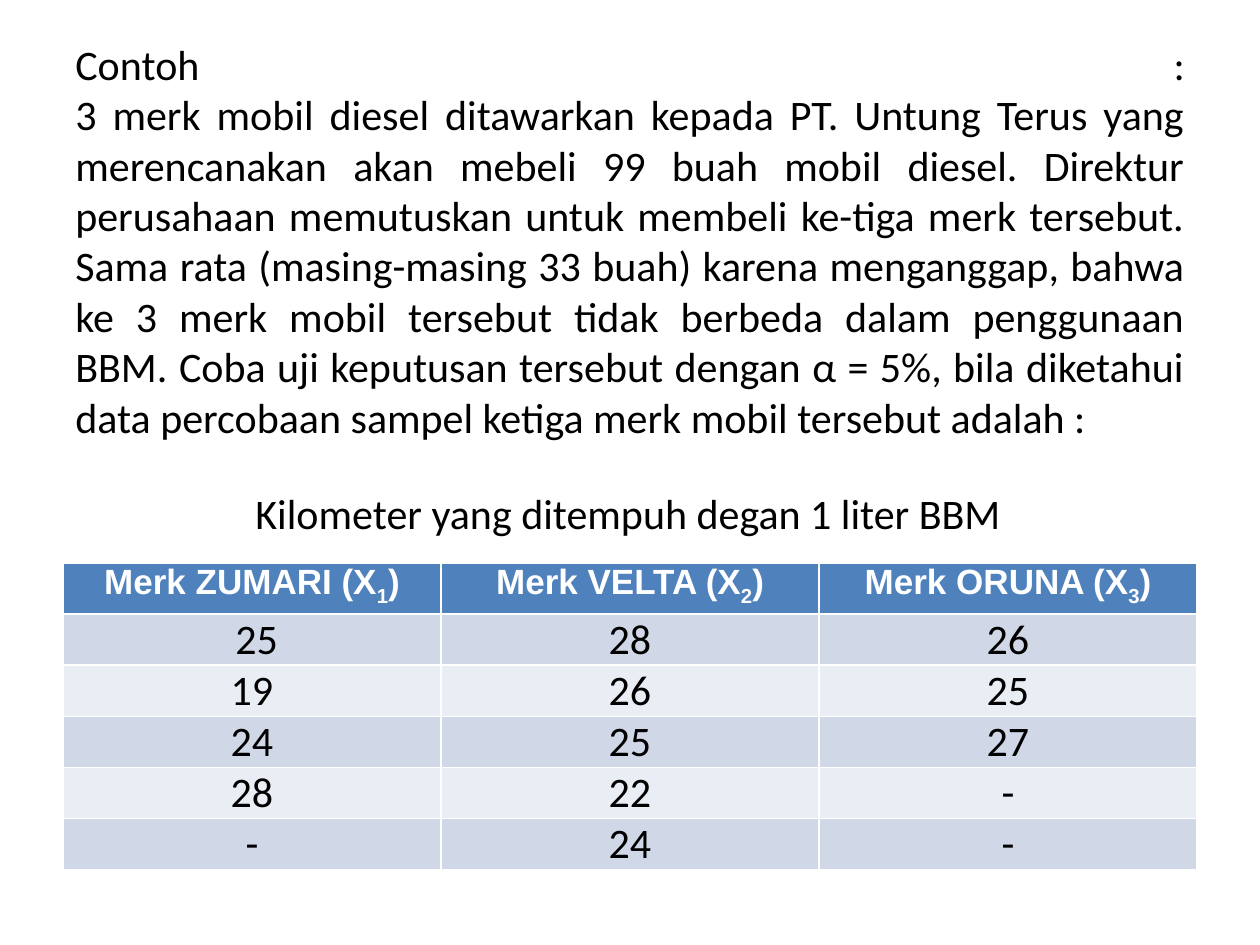
from pptx import Presentation
from pptx.dml.color import RGBColor
from pptx.enum.text import MSO_ANCHOR as Anchor, PP_ALIGN as Align
from pptx.util import Cm, Pt


def write(par, text, size=24, font="Calibri", color="000000", bold=False,
          align=Align.LEFT, sub=False):
    """Add one run of text to a paragraph."""
    par.alignment = align
    run = par.add_run()
    run.text = text
    face = run.font
    face.size, face.name, face.bold = Pt(size), font, bold
    face.color.rgb = RGBColor.from_string(color)
    if sub:
        run._r.get_or_add_rPr().set("baseline", "-25000")


deck = Presentation()
deck.slide_width, deck.slide_height = Cm(25.4), Cm(19.05)
slide = deck.slides.add_slide(deck.slide_layouts[6])

# Problem statement
frame = slide.shapes.add_textbox(Cm(1.27), Cm(0.53), Cm(22.86), Cm(8.61)).text_frame
frame.word_wrap = True
frame.vertical_anchor = Anchor.MIDDLE
par = frame.paragraphs[0]
write(par, "Contoh :", align=Align.JUSTIFY)
par.add_line_break()
write(par, "3 merk mobil diesel ditawarkan kepada PT. Untung Terus yang "
      "merencanakan akan mebeli 99 buah mobil diesel. Direktur perusahaan "
      "memutuskan untuk membeli ke-tiga merk tersebut. Sama rata "
      "(masing-masing 33 buah) karena menganggap, bahwa ke 3 merk mobil "
      "tersebut tidak berbeda dalam penggunaan BBM. Coba uji keputusan "
      "tersebut dengan α = 5%, bila diketahui data percobaan sampel ketiga "
      "merk mobil tersebut adalah :", align=Align.JUSTIFY)

# Table caption
frame = slide.shapes.add_textbox(Cm(4.9), Cm(9.7), Cm(15.67), Cm(1.27)).text_frame
frame.word_wrap = True
write(frame.paragraphs[0], "Kilometer yang ditempuh degan 1 liter BBM")

# Distance table; the default table style draws the white borders
brands = ["ZUMARI", "VELTA", "ORUNA"]
data = [
    [" 25", "28", "26"],
    ["19", "26", "25"],
    ["24", "25", "27"],
    ["28", "22", "-"],
    ["-", "24", "-"],
]
table = slide.shapes.add_table(len(data) + 1, len(brands), Cm(1.27), Cm(11.35),
                               Cm(22.86), Cm(6.18)).table
for r, row in enumerate([brands] + data):
    table.rows[r].height = Cm(1.03)
    fill = "4F81BD" if r == 0 else "D0D8E8" if r % 2 else "E9EDF4"
    for c, text in enumerate(row):
        cell = table.cell(r, c)
        cell.fill.solid()
        cell.fill.fore_color.rgb = RGBColor.from_string(fill)
        cell.margin_left = cell.margin_right = Cm(0.18)
        cell.margin_top = cell.margin_bottom = 0
        par = cell.text_frame.paragraphs[0]
        if r:
            write(par, text, align=Align.CENTER)
            continue
        for part, sub in [(f"Merk {text} (X", False), (str(c + 1), True), (")", False)]:
            write(par, part, size=20, font="Arial", color="FFFFFF", bold=True,
                  align=Align.CENTER, sub=sub)

deck.save("out.pptx")
